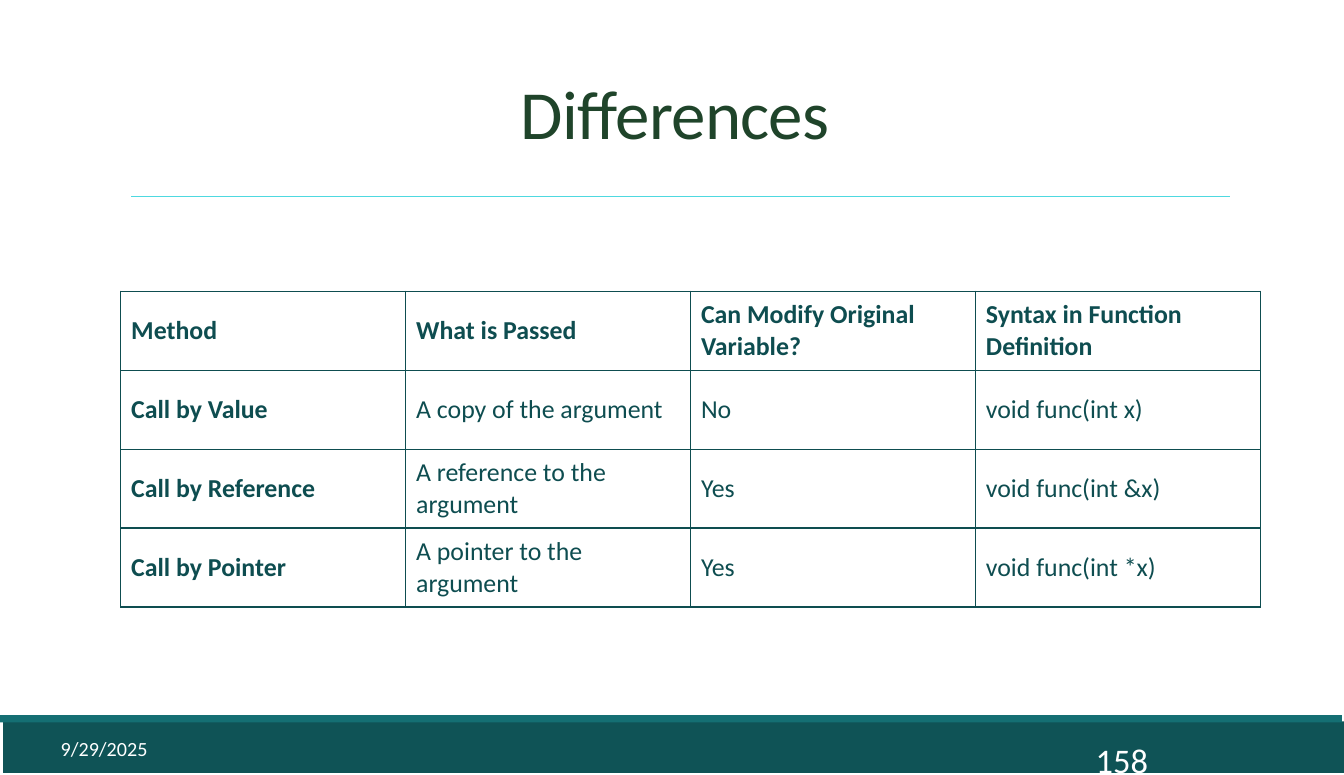
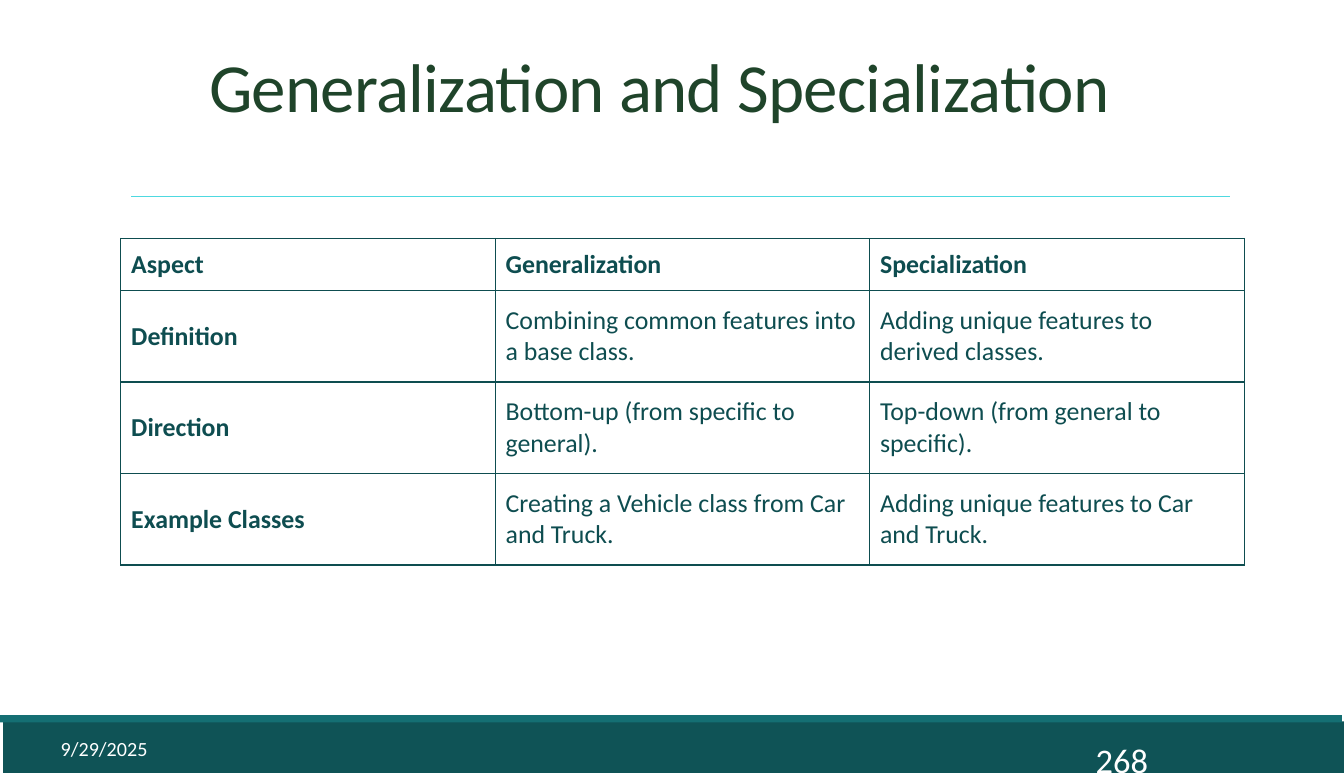
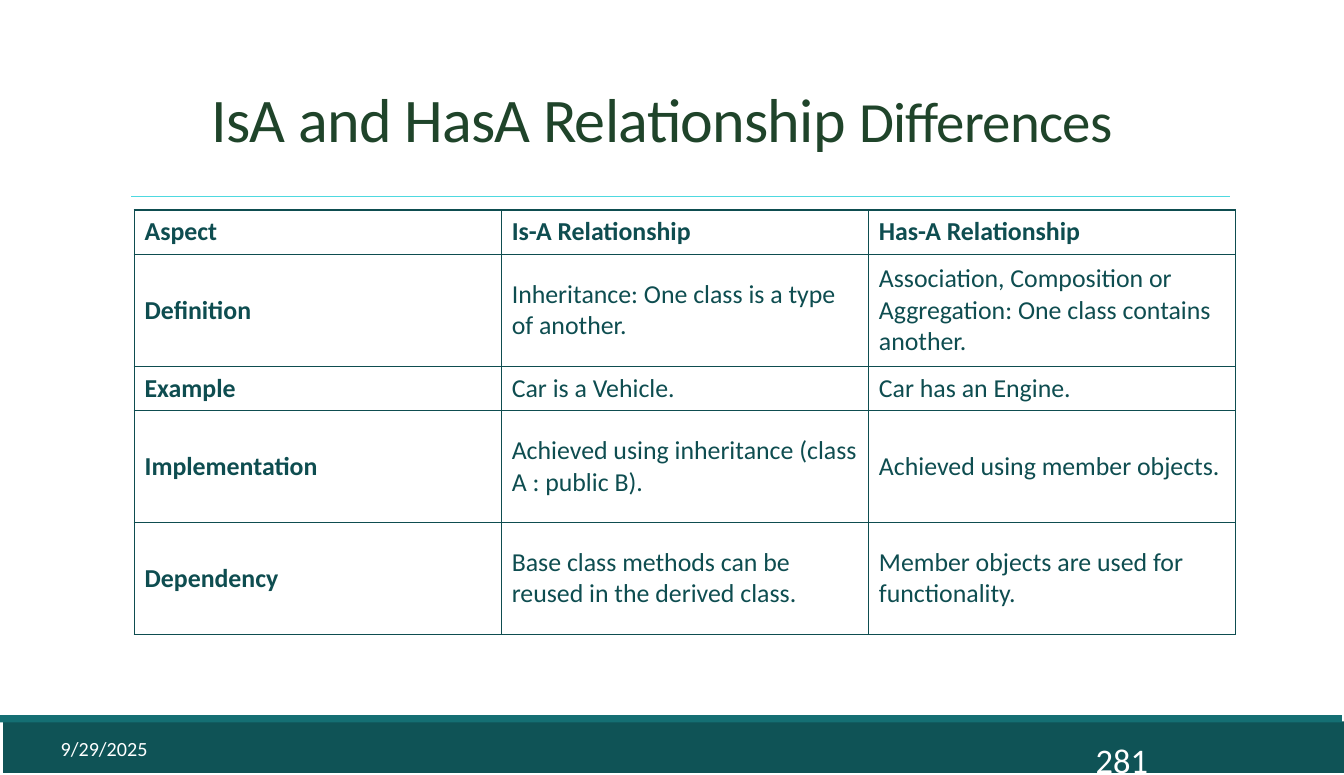
from lxml import etree
from pptx import Presentation
from pptx.dml.color import RGBColor
from pptx.enum.shapes import MSO_CONNECTOR, MSO_SHAPE
from pptx.enum.text import MSO_ANCHOR, MSO_AUTO_SIZE, PP_ALIGN
from pptx.oxml.ns import qn
from pptx.util import Cm, Pt

# Shared style
FONT = "Calibri"
WHITE = RGBColor(0xFF, 0xFF, 0xFF)
BAND = RGBColor(0x0F, 0x53, 0x56)
BAND_EDGE = RGBColor(0x14, 0x6F, 0x73)
RULE = RGBColor(0x4E, 0xD9, 0xE0)
TITLE = RGBColor(0x1F, 0x44, 0x2A)
INK = RGBColor(0x0E, 0x4D, 0x50)
SLIDE_W, SLIDE_H = 33.02, 19.05
DATE = "9/29/2025"

# Table contents: the first row and the first column are headings
CALL_METHODS = [
    ("Method", "What is Passed", "Can Modify Original Variable?",
     "Syntax in Function Definition"),
    ("Call by Value", "A copy of the argument", "No", "void func(int x)"),
    ("Call by Reference", "A reference to the argument", "Yes",
     "void func(int &x)"),
    ("Call by Pointer", "A pointer to the argument", "Yes",
     "void func(int *x)"),
]
CLASS_DIRECTIONS = [
    ("Aspect", "Generalization", "Specialization"),
    ("Definition", "Combining common features into a base class.",
     "Adding unique features to derived classes."),
    ("Direction", "Bottom-up (from specific to general).",
     "Top-down (from general to specific)."),
    ("Example Classes", "Creating a Vehicle class from Car and Truck.",
     "Adding unique features to Car and Truck."),
]
RELATIONSHIPS = [
    ("Aspect", "Is-A Relationship", "Has-A Relationship"),
    ("Definition", "Inheritance: One class is a type of another.",
     "Association, Composition or Aggregation: One class contains another."),
    ("Example", "Car is a Vehicle.", "Car has an Engine."),
    ("Implementation", "Achieved using inheritance (class A : public B).",
     "Achieved using member objects."),
    ("Dependency", "Base class methods can be reused in the derived class.",
     "Member objects are used for functionality."),
]


def add_run(p, text, size, color, bold=False):
    r = p.add_run()
    r.text = text
    r.font.name = FONT
    r.font.size = Pt(size)
    r.font.bold = bold
    r.font.color.rgb = color
    return r


def add_band(slide, left, top, height, color):
    sp = slide.shapes.add_shape(MSO_SHAPE.RECTANGLE, Cm(left), Cm(top),
                                Cm(SLIDE_W), Cm(height))
    sp.shadow.inherit = False
    sp.fill.solid()
    sp.fill.fore_color.rgb = color
    sp.line.fill.background()


def add_rule(slide, left, right, top):
    line = slide.shapes.add_connector(MSO_CONNECTOR.STRAIGHT, Cm(left), Cm(top),
                                      Cm(right), Cm(top))
    line.line.color.rgb = RULE
    line.line.width = Pt(0.5)
    etree.SubElement(line._element.spPr, qn("a:effectLst"))


def add_label(slide, text, left, top, width, height, size):
    tf = slide.shapes.add_textbox(Cm(left), Cm(top), Cm(width),
                                  Cm(height)).text_frame
    tf.word_wrap = True
    tf.vertical_anchor = MSO_ANCHOR.MIDDLE
    add_run(tf.paragraphs[0], text, size, WHITE)


def set_title(slide, runs, left, top, width, height):
    sp = slide.shapes.title
    sp.left, sp.top, sp.width, sp.height = map(Cm, (left, top, width, height))
    tf = sp.text_frame
    tf.word_wrap = True
    tf.auto_size = MSO_AUTO_SIZE.NONE
    tf.vertical_anchor = MSO_ANCHOR.BOTTOM
    p = tf.paragraphs[0]
    p.alignment = PP_ALIGN.CENTER
    p.line_spacing = 0.85
    for text, size in runs:
        r = add_run(p, text, size, TITLE)
        r.font._element.set("spc", "-50")


def set_borders(cell):
    tcPr = cell._tc.get_or_add_tcPr()
    for side in ("lnL", "lnR", "lnT", "lnB"):
        ln = etree.SubElement(tcPr, qn(f"a:{side}"), w=str(Pt(1)))
        fill = etree.SubElement(ln, qn("a:solidFill"))
        etree.SubElement(fill, qn("a:srgbClr"), val=str(INK))


def add_grid(slide, rows, left, top, col_width, row_heights):
    cols = len(rows[0])
    frame = slide.shapes.add_table(len(rows), cols, Cm(left), Cm(top),
                                   Cm(col_width * cols), Cm(sum(row_heights)))
    table = frame.table
    table.first_row = table.horz_banding = False
    for col in table.columns:
        col.width = Cm(col_width)
    for i, (texts, height) in enumerate(zip(rows, row_heights)):
        table.rows[i].height = Cm(height)
        for j, text in enumerate(texts):
            cell = table.cell(i, j)
            set_borders(cell)
            cell.fill.background()
            cell.vertical_anchor = MSO_ANCHOR.MIDDLE
            add_run(cell.text_frame.paragraphs[0], text, 18, INK,
                    bold=i == 0 or j == 0)


def add_slide(prs, number):
    slide = prs.slides.add_slide(prs.slide_layouts[5])
    add_band(slide, 0.08, 17.73, 1.27, BAND)
    add_band(slide, -0.05, 17.58, 0.18, BAND_EDGE)
    add_rule(slide, 3.23, 30.23, 4.83)
    add_label(slide, DATE, 1.24, 17.88, 6.7, 1.02, 14)
    add_label(slide, number, 26.67, 18.26, 3.56, 0.81, 24)
    return slide


def main():
    prs = Presentation()
    prs.slide_width, prs.slide_height = Cm(SLIDE_W), Cm(SLIDE_H)

    # Ways to pass arguments
    s = add_slide(prs, "158")
    set_title(s, [("Differences", 48)], 2.97, 0.79, 27.23, 3.1)
    add_grid(s, CALL_METHODS, 2.97, 7.16, 7, [1.94] * 4)

    # Generalization and specialization
    s = add_slide(prs, "268")
    set_title(s, [("Generalization and Specialization", 48)],
              2.95, 0, 26.49, 3.25)
    add_grid(s, CLASS_DIRECTIONS, 2.97, 5.86, 9.2, [1.28] + [2.25] * 3)

    # Is-A and Has-A
    s = add_slide(prs, "281")
    set_title(s, [("IsA and HasA Relationship ", 43.2), ("Differences", 39.6)],
              3.02, 0.69, 26.49, 3.25)
    add_grid(s, RELATIONSHIPS, 3.3, 5.16, 9.02, [1.09, 2.75, 1.09, 2.75, 2.75])

    prs.save("out.pptx")


if __name__ == "__main__":
    main()
